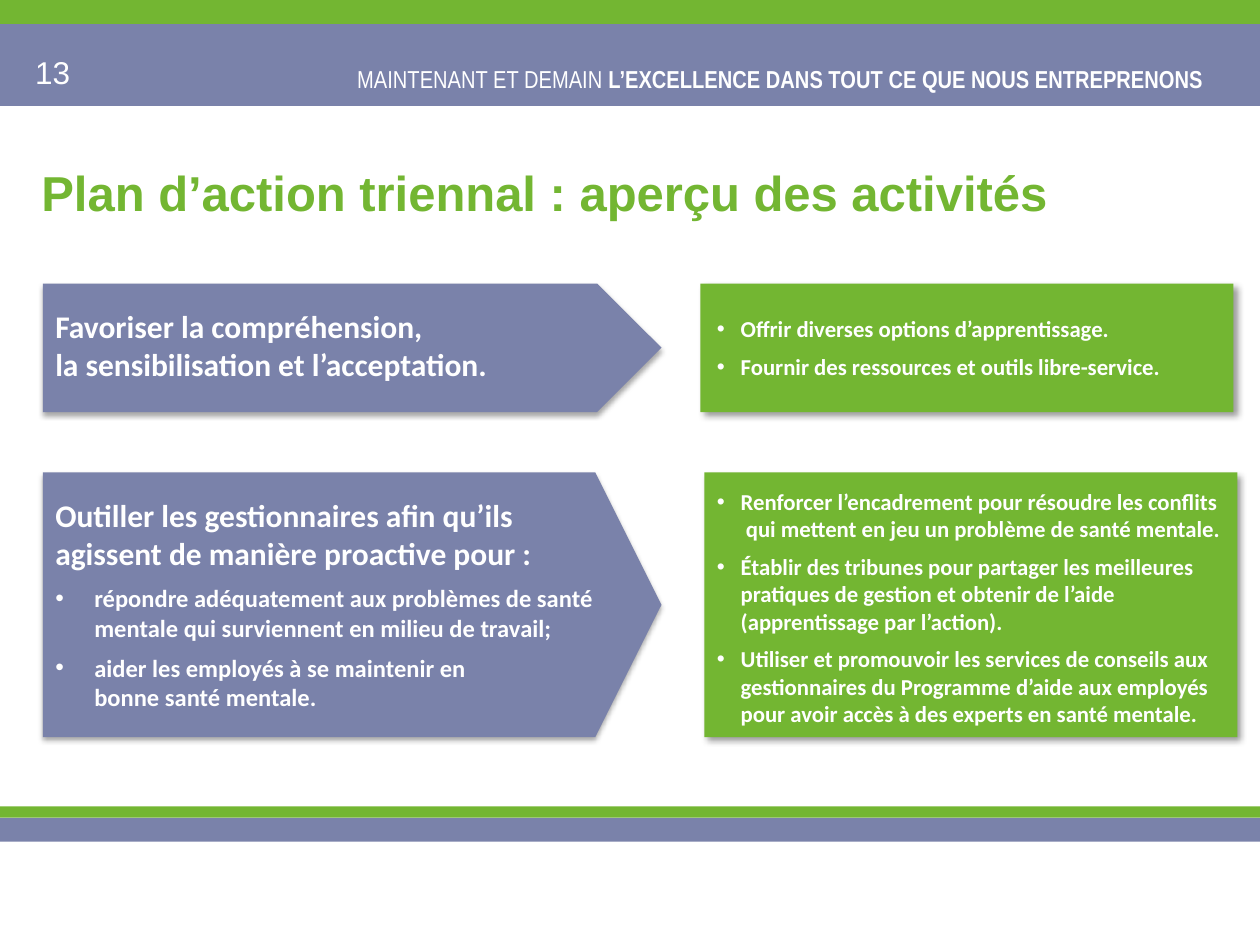
"""Build the slide on the three-year action plan and its activities."""
from dataclasses import dataclass

from lxml.etree import SubElement
from pptx import Presentation
from pptx.dml.color import RGBColor
from pptx.enum.shapes import MSO_SHAPE as Shape
from pptx.enum.text import MSO_ANCHOR as Anchor, PP_ALIGN as Align
from pptx.oxml.ns import qn
from pptx.util import Inches, Pt


@dataclass(frozen=True)
class Theme:
    slate: RGBColor = RGBColor(0x7A, 0x82, 0xAA)
    green: RGBColor = RGBColor(0x73, 0xB6, 0x32)
    white: RGBColor = RGBColor(0xFF, 0xFF, 0xFF)
    title: int = 28
    lead: int = 18
    item: int = 14
    detail: int = 13


theme = Theme()
deck = Presentation()
deck.slide_width, deck.slide_height = Inches(10), Inches(7.5)
page = deck.slides.add_slide(deck.slide_layouts[6])


def add_block(place, color, kind=Shape.RECTANGLE, point=None, shadow=None):
    block = page.shapes.add_shape(kind, *map(Inches, place))
    block.fill.solid()
    block.fill.fore_color.rgb = color
    block.line.fill.background()
    block.shadow.inherit = False
    if point is not None:
        block.adjustments[0] = point
    if shadow:
        blur, distance, angle, opacity = shadow
        effects = block._element.spPr.find(qn("a:effectLst"))
        outer = SubElement(effects, qn("a:outerShdw"), blurRad=str(Pt(blur)), dist=str(Pt(distance)),
                           dir=str(angle * 60000), rotWithShape="0")
        tint = SubElement(outer, qn("a:srgbClr"), val="000000")
        SubElement(tint, qn("a:alpha"), val=str(opacity * 1000))


def add_text(place, lines, size, indent=0, after=0, font="Calibri", color=theme.white, bold=True,
             anchor=Anchor.TOP):
    box = page.shapes.add_textbox(*map(Inches, place))
    frame = box.text_frame
    frame.word_wrap = True
    frame.vertical_anchor = anchor
    for index, line in enumerate(lines):
        para = frame.paragraphs[0] if index == 0 else frame.add_paragraph()
        para.text = line
        para.space_after = Pt(after)
        if indent:
            properties = para._p.get_or_add_pPr()
            properties.set("marL", str(Inches(indent)))
            properties.set("indent", str(-Inches(indent)))
            SubElement(properties, qn("a:buFont"), typeface="Arial")
            SubElement(properties, qn("a:buChar"), char="•")
        para.font.name, para.font.size = font, Pt(size)
        para.font.bold, para.font.color.rgb = bold, color
    return frame


for top, height, color in [(0.19, 0.65, theme.slate), (0, 0.19, theme.green),
                           (6.49, 0.19, theme.slate), (6.4, 0.09, theme.green)]:
    add_block((0, top, 10, height), color)

banner = add_text((2.41, 0.46, 7.24, 0.34), ["MAINTENANT ET DEMAIN "], theme.item,
                  font="Arial Narrow", bold=False).paragraphs[0]
banner.alignment = Align.RIGHT
span = banner.add_run()
span.text = "L’EXCELLENCE DANS TOUT CE QUE NOUS ENTREPRENONS"
span.font.bold = True
add_text((0.18, 0.37, 2.33, 0.4), ["13"], theme.lead, font="Arial", bold=False)
add_text((0.23, 0.9, 9.49, 1.25), ["Plan d’action triennal : aperçu des activités"], theme.title,
         font="Arial", color=theme.green, anchor=Anchor.MIDDLE)

for top, height, point, panel_left in [(2.25, 1.02, 0.5, 5.56), (3.75, 2.1, 0.25, 5.59)]:
    add_block((0.34, top, 4.91, height), theme.slate, Shape.PENTAGON, point, (3.1, 1.8, 90, 35))
    add_block((panel_left, top, 4.23, height), theme.green, Shape.PENTAGON, 0, (4, 3, 45, 40))

add_text((0.34, 2.39, 4.58, 0.71),
         ["Favoriser la compréhension,", "la sensibilisation et l’acceptation."], theme.lead)
add_text((0.34, 3.89, 4.58, 0.71),
         ["Outiller les gestionnaires afin qu’ils agissent de manière proactive pour :"], theme.lead)
add_text((0.34, 4.58, 4.58, 1.13), [
    "répondre adéquatement aux problèmes de santé mentale qui surviennent en milieu de travail;",
    "aider les employés à se maintenir en\vbonne santé mentale.",
], theme.item, indent=0.31, after=6)
add_text((5.59, 2.45, 4.01, 0.62), [
    "Offrir diverses options d’apprentissage.",
    "Fournir des ressources et outils libre-service.",
], theme.detail, indent=0.19, after=6)
add_text((5.59, 3.82, 4.19, 2.31), [
    "Renforcer l’encadrement pour résoudre les conflits\v qui mettent en jeu un problème de santé mentale.",
    "Établir des tribunes pour partager les meilleures pratiques de gestion et obtenir de l’aide "
    "(apprentissage par l’action).",
    "Utiliser et promouvoir les services de conseils aux gestionnaires du Programme d’aide aux "
    "employés pour avoir accès à des experts en santé mentale.",
], theme.detail, indent=0.19, after=6)

deck.save("out.pptx")
